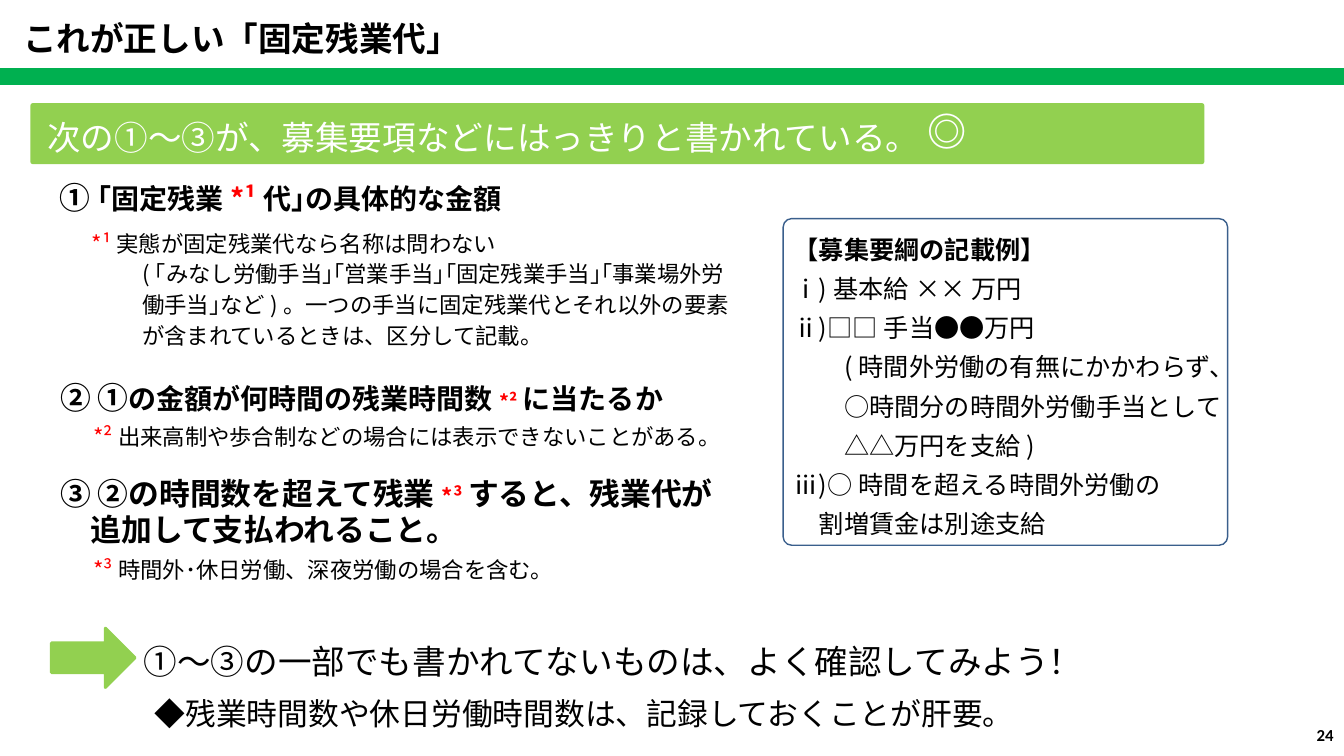
from lxml import etree
from pptx import Presentation
from pptx.dml.color import RGBColor
from pptx.enum.shapes import MSO_SHAPE
from pptx.enum.text import MSO_ANCHOR, PP_ALIGN
from pptx.oxml.ns import qn
from pptx.util import Pt

RECTANGLE = MSO_SHAPE.RECTANGLE
ROUNDED = MSO_SHAPE.ROUNDED_RECTANGLE
ARROW = MSO_SHAPE.RIGHT_ARROW
MIDDLE = MSO_ANCHOR.MIDDLE
LEFT, RIGHT = PP_ALIGN.LEFT, PP_ALIGN.RIGHT

COLORS = {
    "white": "FFFFFF",
    "black": "000000",
    "lime": "92D050",
    "green": "00B050",
    "navy": "3A5F8C",
    "red": "FF0000",
}
JAPANESE = "Noto Sans CJK JP"
NUMERALS = "Calibri"


def color(name):
    """Return the named colour."""
    return RGBColor.from_string(COLORS[name])


def add_span(para, text, size, tint="black", bold=False, font=JAPANESE):
    """Append one run with its font, size and colour."""
    span = para.add_run()
    span.text = text
    span.font.size = Pt(size)
    span.font.bold = bold
    span.font.name = font
    span.font.color.rgb = color(tint)
    east_asian = etree.SubElement(span.font._element, qn("a:ea"))
    east_asian.set("typeface", font)


def add_paras(frame, paras, spacing=None, align=LEFT):
    """Fill a frame from (indent, spans) pairs."""
    frame.word_wrap = True
    for index, (indent, spans) in enumerate(paras):
        para = frame.add_paragraph() if index else frame.paragraphs[0]
        para.alignment = align
        if spacing:
            para.line_spacing = Pt(spacing)
        if indent:
            properties = para._p.get_or_add_pPr()
            properties.set("marL", str(Pt(indent)))
            properties.set("indent", "0")
        for span in spans:
            add_span(para, *span)


def add_figure(page, kind, box, fill=None, line=None, weight=1):
    """Add a flat preset shape."""
    shape = page.shapes.add_shape(kind, *map(Pt, box))
    shape.shadow.inherit = False
    if fill:
        shape.fill.solid()
        shape.fill.fore_color.rgb = color(fill)
    else:
        shape.fill.background()
    if line:
        shape.line.color.rgb = color(line)
        shape.line.width = Pt(weight)
    else:
        shape.line.fill.background()
    return shape


def add_panel(page, box, paras, spacing, fill=None, line=None, right=0):
    """Add a slightly rounded panel with text centred in height."""
    panel = add_figure(page, ROUNDED, box, fill, line)
    panel.adjustments[0] = 0.026
    frame = panel.text_frame
    frame.vertical_anchor = MIDDLE
    frame.margin_left, frame.margin_right = Pt(5.8), Pt(right)
    frame.margin_top = frame.margin_bottom = Pt(2.9)
    add_paras(frame, paras, spacing)


def add_header(page, left, top, width, height):
    """Place the slide title above its green bar."""
    add_figure(page, RECTANGLE, (left, top + height - 10, width, 10), "green", "green", 2)
    title = page.shapes.add_textbox(Pt(left + 9.4), Pt(top + 9.4), Pt(850), Pt(36))
    add_paras(title.text_frame, [(0, [("これが正しい「固定残業代」", 24, "black", True)])])


def add_banner(page, left, top, width, height):
    """Place the lime banner and its double circle."""
    message = " 次の①～③が、募集要項などにはっきりと書かれている。"
    add_panel(page, (left, top, width, height), [(0, [(message, 24, "white")])],
              34, "lime", "lime")
    add_panel(page, (left + 634.3, top, 41, height),
              [(0, [("◎", 28, "white", True)])], 30)


def add_point(page, left, top, width, height, heading, spacing, note):
    """Place one numbered condition and the footnote under it."""
    add_panel(page, (left, top, width, height), heading, spacing, "white")
    (note_left, note_top, note_width, note_height), paras, note_spacing, right = note
    add_panel(page, (left + note_left, top + note_top, note_width, note_height),
              paras, note_spacing, right=right)


def add_example(page, left, top, width, height):
    """Place the outlined sample wording."""
    lines = [
        (0, "【募集要綱の記載例】", True),
        (0, "ⅰ)基本給××万円", False),
        (0, "ⅱ)□□手当●●万円", False),
        (36, "(時間外労働の有無にかかわらず、○時間分の時間外労働手当として△△万円を支給)", False),
        (0, "ⅲ)○時間を超える時間外労働の", False),
        (18, "割増賃金は別途支給", False),
    ]
    paras = [(indent, [(text, 18, "black", bold)]) for indent, text, bold in lines]
    add_panel(page, (left, top, width, height), paras, 28, "white", "navy")


def add_advice(page, left, top, width, height):
    """Place the arrow and the two closing lines."""
    add_figure(page, ARROW, (left, top, 59.8, 42.5), "lime", "lime", 2)
    add_panel(page, (left + 59.8, top, width - 59.8, 42.5),
              [(0, [("①～③の一部でも書かれてないものは、よく確認してみよう！", 24)])], 34)
    add_panel(page, (left + 67.7, top + height - 33.8, 661, 33.8),
              [(0, [("◆残業時間数や休日労働時間数は、記録しておくことが肝要。", 22)])], 30)


def add_page_number(page, left, top, width, height):
    """Place the page number at the right edge."""
    number = page.shapes.add_textbox(Pt(left), Pt(top), Pt(width), Pt(height))
    number.text_frame.vertical_anchor = MIDDLE
    add_paras(number.text_frame, [(0, [("24", 12, "black", True, NUMERALS)])], align=RIGHT)


def main():
    """Build and save the slide."""
    deck = Presentation()
    deck.slide_width, deck.slide_height = Pt(960), Pt(540)
    page = deck.slides.add_slide(deck.slide_layouts[6])

    add_header(page, 0, 0, 960, 59.8)
    add_banner(page, 22.3, 74.2, 837.4, 42.5)
    add_point(
        page, 36.7, 122.4, 439.2, 33.8,
        [(0, [("① ", 22, "black", True), ("｢固定残業", 20, "black", True),
              ("*¹", 20, "red", True), ("代｣の具体的な金額", 20, "black", True)])], 30,
        ((22.3, 34.6, 477.4, 96.5),
         [(0, [("*¹", 16, "red"), ("実態が固定残業代なら名称は問わない", 16)]),
          (36, [("(｢みなし労働手当｣｢営業手当｣｢固定残業手当｣｢事業場外労働手当｣など)。"
                 "一つの手当に固定残業代とそれ以外の要素が含まれているときは、区分して記載。", 16)])],
         22, 2.9))
    add_point(
        page, 36.7, 256.3, 439.2, 51.8,
        [(0, [("② ①", 22, "black", True), ("の金額が何時間の残業時間数", 20, "black", True),
              ("*²", 14, "red", True), ("に当たるか", 20, "black", True)])], 30,
        ((23.8, 33.1, 456.5, 33.8),
         [(0, [("*²", 16, "red"),
               ("出来高制や歩合制などの場合には表示できないことがある。", 16)])], 30, 0))
    add_point(
        page, 36.7, 337, 500.4, 56.9,
        [(0, [("③ ②の時間数を超えて残業", 22, "black", True), ("*³", 16, "red", True),
              ("すると、残業代が", 22, "black", True)]),
         (22, [("追加して支払われること。", 22, "black", True)])], 26,
        ((23.8, 51.8, 411, 33.1),
         [(0, [("*³", 16, "red"), ("時間外･休日労働、深夜労働の場合を含む。", 16)])], 22, 2.9))
    add_example(page, 559.4, 156.2, 317.5, 233.3)
    add_advice(page, 36.7, 448.6, 755.3, 76.2)
    add_page_number(page, 735.8, 510.5, 224, 28.8)

    deck.save("out.pptx")


if __name__ == "__main__":
    main()
